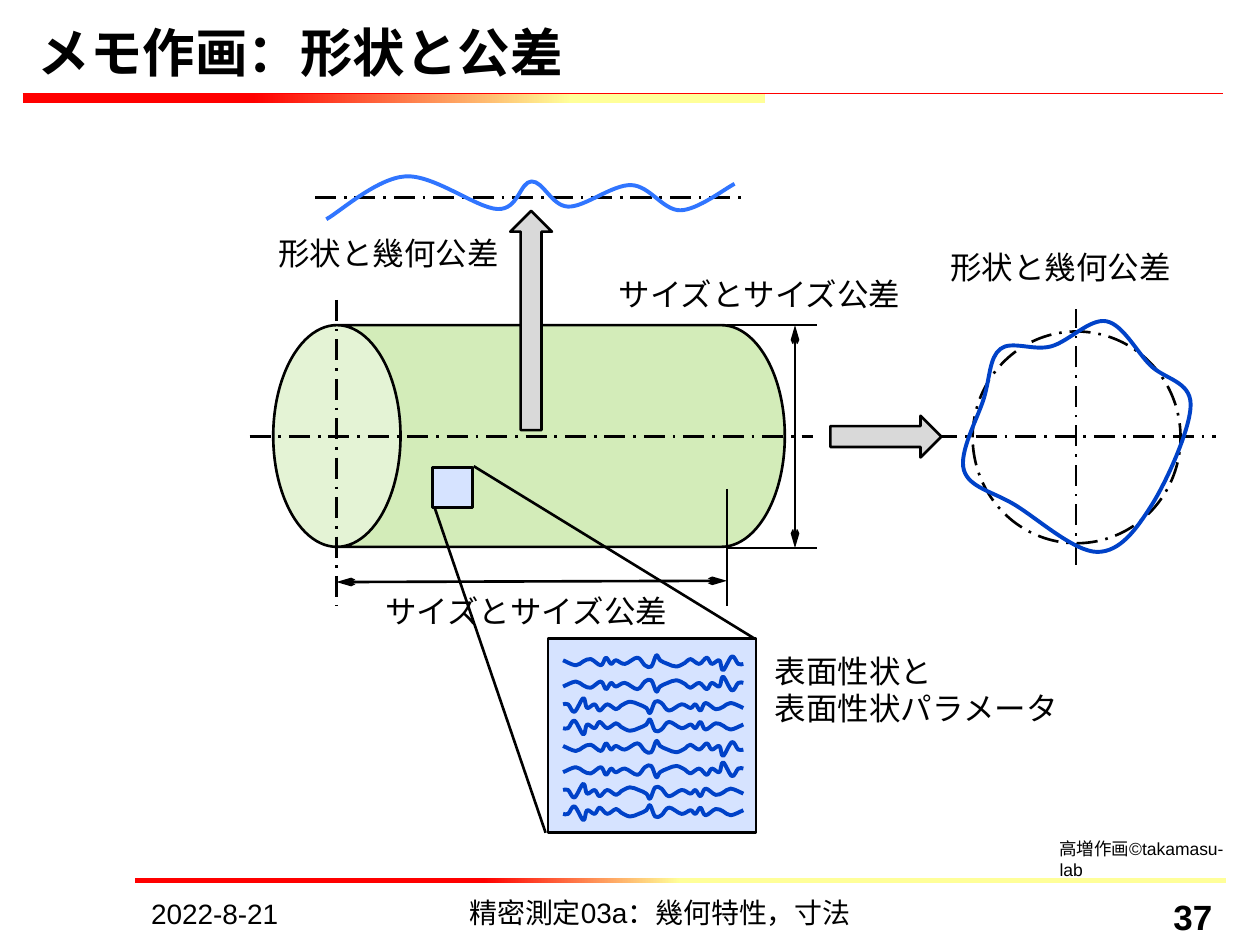
from lxml.etree import Element, SubElement
from pptx import Presentation
from pptx.dml.color import RGBColor
from pptx.enum.dml import MSO_LINE
from pptx.enum.shapes import MSO_CONNECTOR, MSO_SHAPE
from pptx.enum.text import MSO_ANCHOR, MSO_AUTO_SIZE, PP_ALIGN
from pptx.oxml.ns import qn
from pptx.util import Pt

FONT = "Arial"
BLACK, RED, YELLOW = "000000", "FF0000", "FFFF99"
GREEN, PALE_BLUE, GREY = "D3ECB9", "D6E3FF", "D9D9D9"
BLUE, LIGHT_BLUE = "0042C8", "3075FF"

TITLE = "メモ作画：形状と公差"
LABELS = [
    (("サイズとサイズ公差",), (350.6, 154, 175, 27.4)),
    (("形状と幾何公差",), (156.2, 131, 139.7, 27.4)),
    (("表面性状と", "表面性状パラメータ"), (440, 369.4, 200, 49.7)),
    (("形状と幾何公差",), (540, 139, 139.7, 27.4)),
    (("サイズとサイズ公差",), (217.4, 335.5, 172, 27.4)),
]
CREDIT = "高増作画©takamasu-lab", (602.6, 475.9, 102, 32)
FOOTER = [
    ("2022-8-21", (79.2, 509, 101.5, 21.6), PP_ALIGN.LEFT, 16, False),
    ("精密測定03a：幾何特性，寸法", (190, 508.3, 374.4, 21), PP_ALIGN.CENTER, 16, False),
    ("37", (581, 508.3, 118.8, 21), PP_ALIGN.RIGHT, 20, True),
]

AXES = [
    ((180, 113), (425.5, 113)),
    ((142.6, 249.5), (464.4, 249.5)),
    ((192.2, 171.4), (192.2, 346.3)),
    ((535, 249.5), (694.8, 249.5)),
    ((614.9, 322.6), (614.9, 176.4)),
]
DIMENSIONS = [((454.3, 185.8), (454.3, 313.2)), ((192.2, 332.6), (415.4, 331.9))]
EXTENSIONS = [
    ((415.4, 279.4), (415.4, 346.3)),
    ((415.4, 313.2), (466.6, 313.2)),
    ((415.4, 185.8), (466.6, 185.8)),
]
ZOOM_LINES = [((311.8, 475.9), (248.4, 290.2)), ((431.3, 365), (270.7, 266.4))]

STRAIGHTNESS = [
    (186.5, 125.3), (231.8, 100.8), (284.4, 119.5), (303.8, 103.7),
    (324.7, 118.1), (360.7, 105.8), (388.8, 120.2), (419.8, 105.1),
]
ROUNDNESS = [
    (571.7, 199.4), (600.5, 198), (632.2, 183.6), (657.4, 208.8), (680.4, 231.1),
    (658.1, 288.7), (627.1, 315.4), (580.3, 288.7), (550.8, 268.6), (562.3, 227.5),
]
ROUGHNESS = [
    (0, 2.9), (7.2, 5.8), (11.5, 3.6), (15.8, 2.2), (21.6, 5.8), (24.5, 1.4),
    (27.4, 5), (30.2, 2.9), (35.3, 5), (42.5, 1.4), (46.8, 5.8), (50.4, 6.5),
    (53.3, 0), (55.4, 2.9), (59.8, 5), (64.8, 6.5), (69.8, 4.3), (72.7, 2.2),
    (77.8, 5), (82.1, 1.4), (85, 5), (89.3, 2.9), (91.4, 8.6), (96.5, 0.7),
    (100.1, 5), (103, 5),
]
ROUGHNESS_SIZE = 103, 8.6
ROUGHNESS_ORIGIN, ROUGHNESS_PITCH = (321.8, 374.4), 12.24
ROUGHNESS_FLIPS = [(False, False), (False, True), (True, True), (True, False)] * 2

presentation = Presentation()
presentation.slide_width, presentation.slide_height = Pt(720), Pt(540)
slide = presentation.slides.add_slide(presentation.slide_layouts[5])
shapes = slide.shapes


def color(value):
    return RGBColor.from_string(value)


def set_line(line, value=BLACK, width=1.5, dashed=False):
    line.color.rgb = color(value)
    line.width = Pt(width)
    if dashed:
        line.dash_style = MSO_LINE.LONG_DASH_DOT


def add_shape(kind, box, fill=None, dashed=False):
    shape = shapes.add_shape(kind, *map(Pt, box))
    shape.shadow.inherit = False
    if fill:
        shape.fill.solid()
        shape.fill.fore_color.rgb = color(fill)
    else:
        shape.fill.background()
    set_line(shape.line, dashed=dashed)
    return shape


def add_gradient_bar(box, red_end, yellow_start):
    bar = add_shape(MSO_SHAPE.RECTANGLE, box)
    bar.line.fill.background()
    bar.fill.gradient()
    bar.fill.gradient_angle = 0
    stops = zip(bar.fill.gradient_stops, (RED, YELLOW), (red_end, yellow_start))
    for stop, value, position in stops:
        stop.color.rgb = color(value)
        stop.position = position


def add_line(start, end, value=BLACK, width=1.5, dashed=False, arrows=False):
    connector = shapes.add_connector(MSO_CONNECTOR.STRAIGHT, *map(Pt, start + end))
    set_line(connector.line, value, width, dashed)
    if arrows:
        outline = connector.line._get_or_add_ln()
        for tag in ("a:headEnd", "a:tailEnd"):
            SubElement(outline, qn(tag), type="arrow", w="sm", len="lg")
    SubElement(connector._element.spPr, qn("a:effectLst"))


def round_corners(curve, padded):
    segments = list(curve._element.iter(qn("a:lnTo")))
    spans = zip(segments, padded, padded[1:], padded[2:], padded[3:])
    for segment, before, start, end, after in spans:
        leaving = [s + (e - b) / 6 for b, s, e in zip(before, start, end)]
        arriving = [e - (a - s) / 6 for s, e, a in zip(start, end, after)]
        bend = Element(qn("a:cubicBezTo"))
        for x, y in (leaving, arriving, end):
            SubElement(bend, qn("a:pt"), x=str(round(x - curve.left)), y=str(round(y - curve.top)))
        segment.getparent().replace(segment, bend)


def add_curve(points, value, closed=False):
    points = [(Pt(x), Pt(y)) for x, y in points]
    if closed:
        points.append(points[0])
        padded = [points[-2]] + points + [points[1]]
    else:
        padded = points[:1] + points + points[-1:]
    builder = shapes.build_freeform(*points[0])
    builder.add_line_segments(points[1:], close=closed)
    curve = builder.convert_to_shape()
    round_corners(curve, padded)
    curve.shadow.inherit = False
    curve.fill.background()
    set_line(curve.line, value, 2.25)


def write(paragraph, text, size, bold=False, align=PP_ALIGN.LEFT):
    paragraph.alignment = align
    run = paragraph.add_run()
    run.text = text
    run.font.name, run.font.size, run.font.bold = FONT, Pt(size), bold
    run.font.color.rgb = color(BLACK)


def add_text(lines, box, size, inset=None, bold=False, align=PP_ALIGN.LEFT):
    frame = shapes.add_textbox(*map(Pt, box)).text_frame
    frame.word_wrap = True
    if inset is not None:
        frame.margin_left = frame.margin_right = Pt(inset)
        frame.margin_top = frame.margin_bottom = Pt(inset)
    for index, line in enumerate(lines):
        paragraph = frame.add_paragraph() if index else frame.paragraphs[0]
        write(paragraph, line, size, bold, align)


add_gradient_bar((77, 501.8, 623.5, 2.9), 0.32, 0.5)
add_gradient_bar((13, 53.3, 424, 5.4), 0.31, 0.74)
add_line((13, 53.3), (699, 53.3), RED, 0.75)

cylinder = add_shape(MSO_SHAPE.CAN, (239, 103, 126.7, 292.3), GREEN)
cylinder.adjustments[0] = 0.574
cylinder.rotation = 270
add_shape(MSO_SHAPE.RECTANGLE, (247, 267.1, 23, 23), PALE_BLUE)
add_shape(MSO_SHAPE.RECTANGLE, (313.2, 365, 118.8, 110.9), PALE_BLUE)
add_shape(MSO_SHAPE.OVAL, (555.8, 189.4, 118.8, 121), dashed=True)

for start, end in AXES:
    add_line(start, end, dashed=True)
for start, end in DIMENSIONS:
    add_line(start, end, arrows=True)
for start, end in EXTENSIONS + ZOOM_LINES:
    add_line(start, end)

add_curve(STRAIGHTNESS, LIGHT_BLUE)
add_curve(ROUNDNESS, BLUE, closed=True)
left, top = ROUGHNESS_ORIGIN
width, height = ROUGHNESS_SIZE
for row, (flip_x, flip_y) in enumerate(ROUGHNESS_FLIPS):
    row_top = top + row * ROUGHNESS_PITCH
    add_curve([
        (left + (width - x if flip_x else x), row_top + (height - y if flip_y else y))
        for x, y in ROUGHNESS
    ], BLUE)

add_shape(MSO_SHAPE.UP_ARROW, (291.6, 120.5, 23.8, 125.3), GREY)
add_shape(MSO_SHAPE.RIGHT_ARROW, (474.5, 237.6, 63.4, 23.8), GREY)

for lines, box in LABELS:
    add_text(lines, box, 18, inset=2.9)
credit, credit_box = CREDIT
add_text([credit], credit_box, 10, inset=2.9)
for text, box, align, size, bold in FOOTER:
    add_text([text], box, size, bold=bold, align=align)

title = shapes.title
title.left, title.top, title.width, title.height = map(Pt, (14.4, 15.1, 686.2, 36))
title.text_frame.auto_size = MSO_AUTO_SIZE.NONE
title.text_frame.vertical_anchor = MSO_ANCHOR.BOTTOM
write(title.text_frame.paragraphs[0], TITLE, 30, bold=True)

presentation.save("out.pptx")
